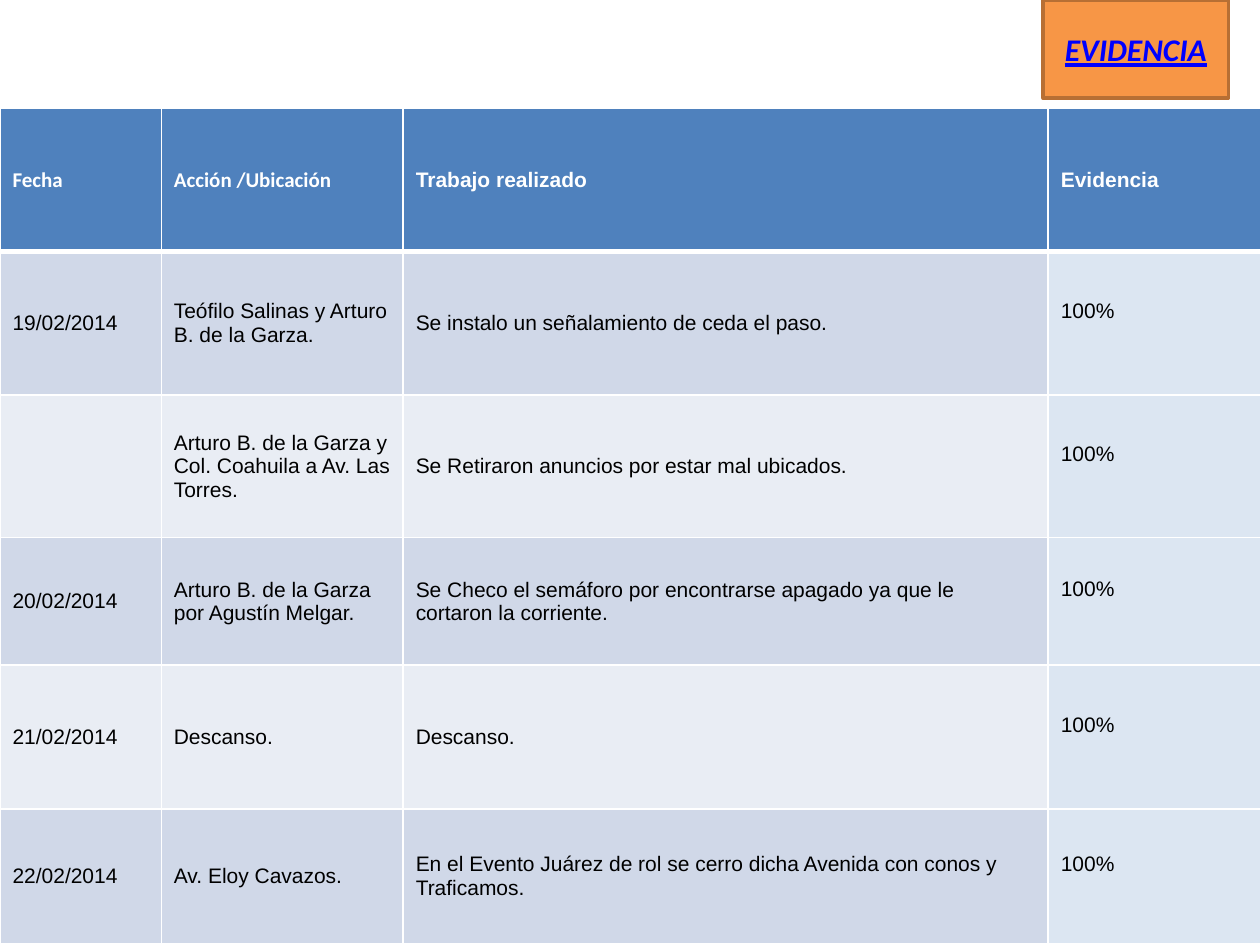
from lxml.etree import SubElement
from pptx import Presentation
from pptx.dml.color import RGBColor
from pptx.enum.shapes import MSO_SHAPE as Shape
from pptx.enum.text import MSO_ANCHOR as Anchor, PP_ALIGN as Align
from pptx.oxml.ns import qn
from pptx.util import Inches, Pt

WIDTH, HEIGHT = Inches(10), Inches(7.5)
WHITE = RGBColor(0xFF, 0xFF, 0xFF)
BLACK = RGBColor(0x00, 0x00, 0x00)
LINK_BLUE = RGBColor(0x00, 0x00, 0xFF)
ORANGE = RGBColor(0xF7, 0x96, 0x46)
BROWN = RGBColor(0xB7, 0x6F, 0x34)
HEADER_BLUE = RGBColor(0x4F, 0x81, 0xBD)
BANDS = RGBColor(0xD0, 0xD8, 0xE8), RGBColor(0xE9, 0xED, 0xF4)
EVIDENCE_BLUE = RGBColor(0xDC, 0xE6, 0xF2)

COLUMN_PERCENTS = 12.8, 19.2, 51.2, 19.2
ROW_PERCENTS = 15.1, 15.2, 15.1, 13.5, 15.2, 14.3
HEADERS = "Fecha", "Acción /Ubicación", "Trabajo realizado", "Evidencia"
HEADER_FONTS = "Calibri", "Calibri", "Arial", "Arial"
WORKS = [
    ("19/02/2014", "Teófilo Salinas y Arturo B. de la Garza.",
     "Se instalo un señalamiento de ceda el paso.", "100%"),
    ("", "Arturo B. de la Garza y Col. Coahuila a Av. Las Torres.",
     "Se Retiraron anuncios por estar mal ubicados.", "100%"),
    ("20/02/2014", "Arturo B. de la Garza por Agustín Melgar.",
     "Se Checo el semáforo por encontrarse apagado ya que le cortaron la corriente.", "100%"),
    ("21/02/2014", "Descanso.", "Descanso.", "100%"),
    ("22/02/2014", "Av. Eloy Cavazos.",
     "En el Evento Juárez de rol se cerro dicha Avenida con conos y Traficamos.", "100%"),
]


def across(percent):
    return int(WIDTH * percent / 100)


def down(percent):
    return int(HEIGHT * percent / 100)


def write(frame, text, font="Arial", size=12, color=BLACK, align=Align.LEFT,
          bold=False, italic=False, underline=False):
    para = frame.paragraphs[0]
    para.alignment = align
    span = para.add_run()
    span.text = text
    span.font.name = font
    span.font.size = Pt(size)
    span.font.color.rgb = color
    span.font.bold = bold
    span.font.italic = italic
    span.font.underline = underline


def add_borders(cell, **widths):
    properties = cell._tc.get_or_add_tcPr()
    for side in "LRTB":
        line = SubElement(properties, qn(f"a:ln{side}"), w=str(Pt(widths.get(side, 1))))
        fill = SubElement(line, qn("a:solidFill"))
        SubElement(fill, qn("a:srgbClr"), val=str(WHITE))


def style_cell(cell, text, fill, borders, **text_format):
    cell.vertical_anchor = Anchor.MIDDLE
    add_borders(cell, **borders)
    cell.fill.solid()
    cell.fill.fore_color.rgb = fill
    if text:
        write(cell.text_frame, text, **text_format)


def add_work_table(page):
    table = page.shapes.add_table(
        len(ROW_PERCENTS), len(COLUMN_PERCENTS), 0, down(11.5),
        across(sum(COLUMN_PERCENTS)), down(sum(ROW_PERCENTS))).table
    table.horz_banding = False
    for column, percent in zip(table.columns, COLUMN_PERCENTS):
        column.width = across(percent)
    for row, percent in zip(table.rows, ROW_PERCENTS):
        row.height = down(percent)

    for column, (text, font) in enumerate(zip(HEADERS, HEADER_FONTS)):
        style_cell(table.cell(0, column), text, HEADER_BLUE, {"B": 3},
                   font=font, color=WHITE, bold=True)

    for row, work in enumerate(WORKS, start=1):
        borders = {"T": 3} if row == 1 else {}
        for column, text in enumerate(work):
            cell = table.cell(row, column)
            is_evidence = column == len(work) - 1
            fill = EVIDENCE_BLUE if is_evidence else BANDS[(row - 1) % 2]
            style_cell(cell, text, fill, borders)
            if is_evidence:
                cell.margin_bottom = Inches(0.24)


def add_evidence_button(page):
    box = page.shapes.add_shape(Shape.RECTANGLE, across(82.8), 0, across(14.7), down(10.4))
    box.shadow.inherit = False
    box.fill.solid()
    box.fill.fore_color.rgb = ORANGE
    box.line.color.rgb = BROWN
    box.line.width = Pt(2)
    box.text_frame.vertical_anchor = Anchor.MIDDLE
    write(box.text_frame, "EVIDENCIA", font="Calibri", size=18, color=LINK_BLUE,
          align=Align.CENTER, bold=True, italic=True, underline=True)


def main():
    deck = Presentation()
    deck.slide_width, deck.slide_height = WIDTH, HEIGHT
    page = deck.slides.add_slide(deck.slide_layouts[6])
    add_work_table(page)
    add_evidence_button(page)
    deck.save("out.pptx")


if __name__ == "__main__":
    main()
